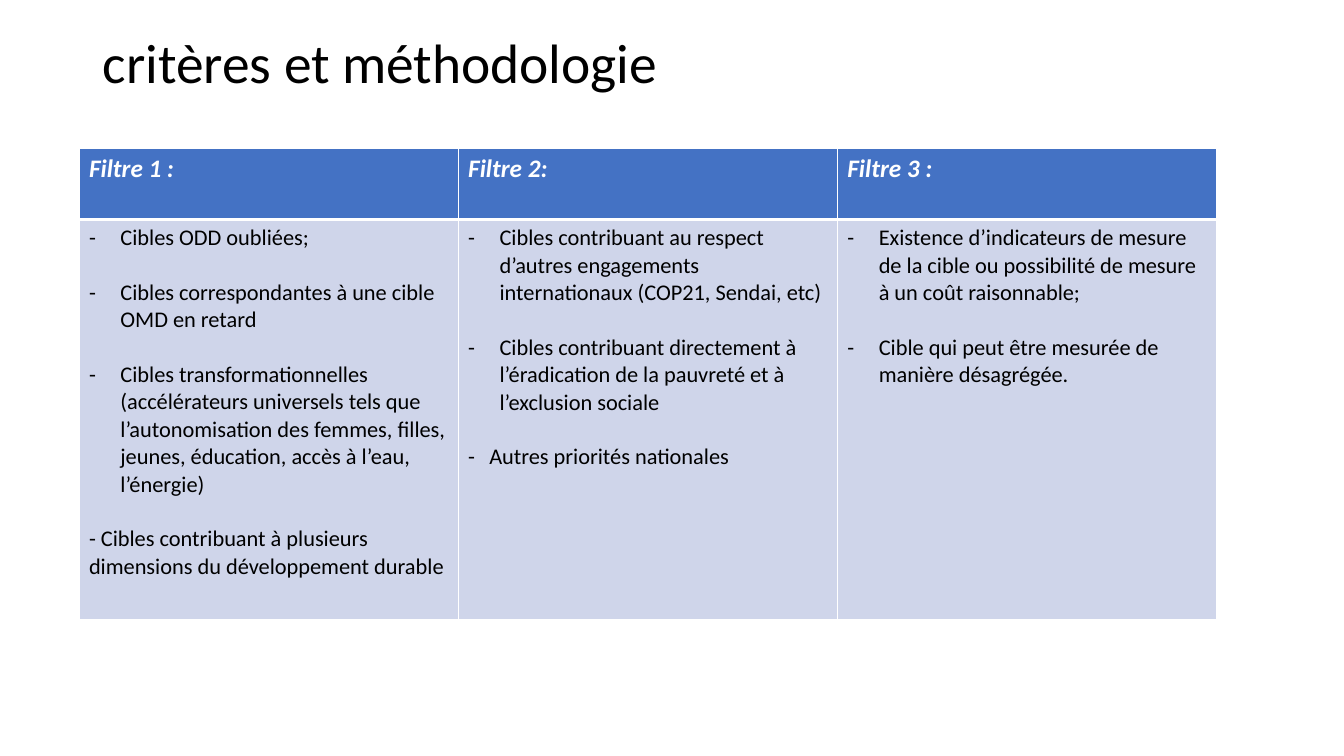
from lxml.etree import SubElement
from pptx import Presentation
from pptx.dml.color import RGBColor
from pptx.enum.text import MSO_ANCHOR as Anchor
from pptx.oxml.ns import qn
from pptx.util import Cm, Pt

COLORS = {"text": "000000", "white": "FFFFFF", "header": "4472C4", "body": "CFD5EA"}
FONT = "Calibri"
WIDE, NARROW = 0.79, 0.53
FILTERS = [
    ("Filtre 1 :", [
        ("Cibles ODD oubliées;", WIDE),
        ("Cibles correspondantes à une cible OMD en retard", WIDE),
        ("Cibles transformationnelles (accélérateurs universels tels que "
         "l’autonomisation des femmes, filles, jeunes, éducation, accès à l’eau, "
         "l’énergie)", WIDE),
        ("- Cibles contribuant à plusieurs dimensions du développement durable", None),
    ]),
    ("Filtre 2:", [
        ("Cibles contribuant au respect d’autres engagements internationaux "
         "(COP21, Sendai, etc)", WIDE),
        ("Cibles contribuant directement à l’éradication de la pauvreté et à "
         "l’exclusion sociale", WIDE),
        ("Autres priorités nationales", NARROW),
    ]),
    ("Filtre 3 :", [
        ("Existence d’indicateurs de mesure de la cible ou possibilité de mesure à "
         "un coût raisonnable;", WIDE),
        ("Cible qui peut être mesurée de manière désagrégée.", WIDE),
    ]),
]


def write(paragraph, text, size=16, color="text", bold=False, italic=False,
          line_spacing=None, space_before=0, indent=None):
    """Write formatted text, with a dash bullet when an indent is given."""
    paragraph.line_spacing = line_spacing
    paragraph.space_before = Pt(space_before)
    if indent:
        properties = paragraph._p.get_or_add_pPr()
        properties.set("marL", str(Cm(indent)))
        properties.set("indent", str(-Cm(indent)))
        SubElement(properties, qn("a:buFont")).set("typeface", FONT)
        SubElement(properties, qn("a:buChar")).set("char", "-")
    run = paragraph.add_run()
    run.text = text
    font = run.font
    font.name, font.size, font.bold, font.italic = FONT, Pt(size), bold, italic
    font.color.rgb = RGBColor.from_string(COLORS[color])


def style_cell(cell, fill, bottom_width=1):
    """Give a cell its white borders and its fill."""
    properties = cell._tc.get_or_add_tcPr()
    for side, width in (("L", 1), ("R", 1), ("T", 1), ("B", bottom_width)):
        border = SubElement(properties, qn(f"a:ln{side}"), w=str(Pt(width)))
        solid = SubElement(border, qn("a:solidFill"))
        SubElement(solid, qn("a:srgbClr")).set("val", COLORS["white"])
    cell.fill.solid()
    cell.fill.fore_color.rgb = RGBColor.from_string(COLORS[fill])


def add_title(slide, left, top, width, height):
    """Place the slide title in the given box."""
    frame = slide.shapes.add_textbox(left, top, width, height).text_frame
    frame.word_wrap = True
    frame.vertical_anchor = Anchor.MIDDLE
    write(frame.paragraphs[0], "critères et méthodologie", size=39.6, line_spacing=0.9)


def add_filter_table(slide, left, top, width, height):
    """Place the table of filters, one column each, in the given box."""
    table = slide.shapes.add_table(2, len(FILTERS), left, top, width, height).table
    table.horz_banding = False
    table.rows[0].height = Cm(1.79)
    table.rows[1].height = height - Cm(1.79)
    for column, (heading, criteria) in enumerate(FILTERS):
        header, body = table.cell(0, column), table.cell(1, column)
        style_cell(header, "header", bottom_width=3)
        write(header.text_frame.paragraphs[0], heading, size=18, color="white",
              bold=True, italic=True)
        style_cell(body, "body")
        frame = body.text_frame
        for index, (text, indent) in enumerate(criteria):
            paragraph = frame.add_paragraph() if index else frame.paragraphs[0]
            write(paragraph, text, indent=indent, space_before=19.5 if index else 0)


def main():
    """Build and save the slide."""
    presentation = Presentation()
    presentation.slide_width, presentation.slide_height = Cm(33.87), Cm(19.05)
    slide = presentation.slides.add_slide(presentation.slide_layouts[6])
    add_title(slide, Cm(2.34), Cm(1.02), Cm(29.21), Cm(1.24))
    add_filter_table(slide, Cm(1.99), Cm(3.74), Cm(28.67), Cm(11.88))
    presentation.save("out.pptx")


if __name__ == "__main__":
    main()
